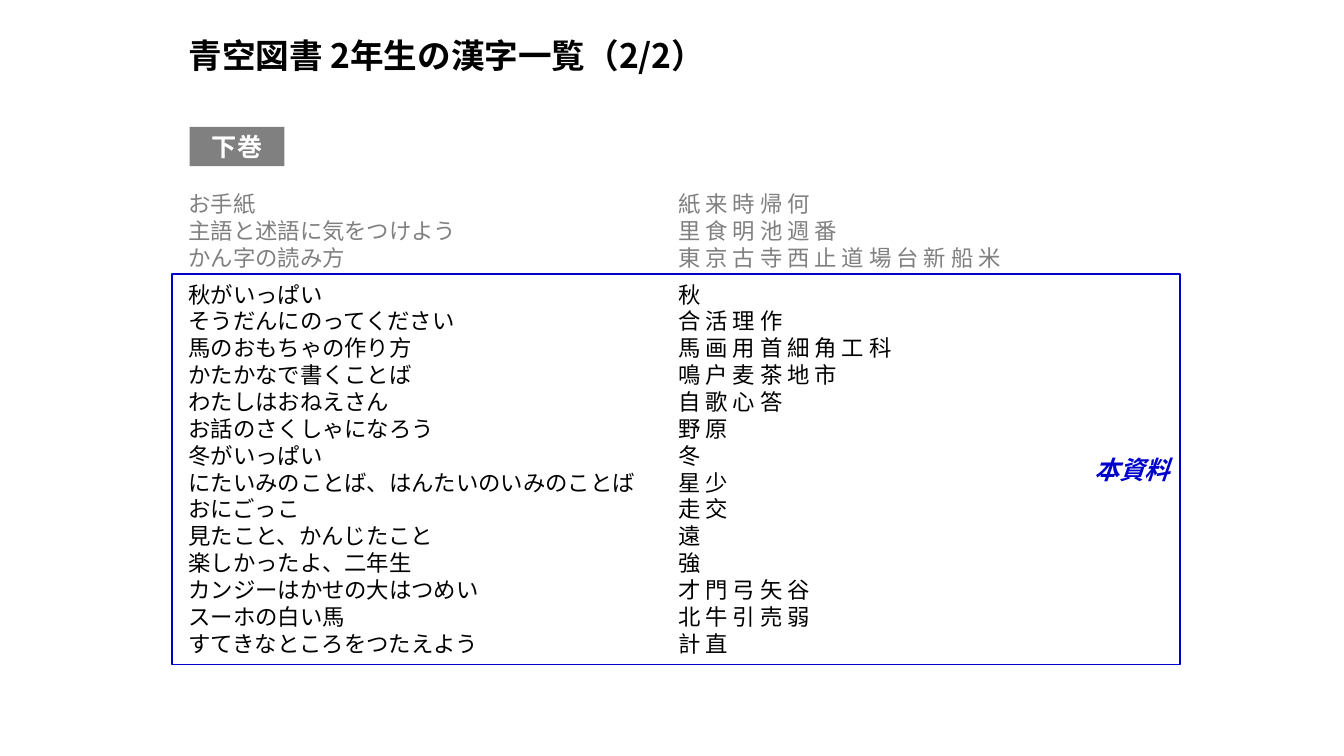
from dataclasses import dataclass

from lxml.etree import SubElement
from pptx import Presentation
from pptx.dml.color import RGBColor
from pptx.enum.shapes import MSO_SHAPE
from pptx.enum.text import MSO_ANCHOR, PP_ALIGN
from pptx.oxml.ns import qn
from pptx.util import Cm, Pt


@dataclass(frozen=True)
class Theme:
    """Fonts, type sizes and colours of the slide."""
    font: str = "Noto Sans CJK JP"
    title: int = 24
    label: int = 18
    body: int = 16
    leading: float = 1.2
    ink: RGBColor = RGBColor(0x00, 0x00, 0x00)
    grey: RGBColor = RGBColor(0x80, 0x80, 0x80)
    white: RGBColor = RGBColor(0xFF, 0xFF, 0xFF)
    blue: RGBColor = RGBColor(0x00, 0x00, 0xCC)


THEME = Theme()

EARLIER_UNITS = [
    ("お手紙", "紙来時帰何"),
    ("主語と述語に気をつけよう", "里食明池週番"),
    ("かん字の読み方", "東京古寺西止道場台新船米"),
]
COVERED_UNITS = [
    ("秋がいっぱい", "秋"),
    ("そうだんにのってください", "合活理作"),
    ("馬のおもちゃの作り方", "馬画用首細角工科"),
    ("かたかなで書くことば", "鳴戸麦茶地市"),
    ("わたしはおねえさん", "自歌心答"),
    ("お話のさくしゃになろう", "野原"),
    ("冬がいっぱい", "冬"),
    ("にたいみのことば、はんたいのいみのことば", "星少"),
    ("おにごっこ", "走交"),
    ("見たこと、かんじたこと", "遠"),
    ("楽しかったよ、二年生", "強"),
    ("カンジーはかせの大はつめい", "才門弓矢谷"),
    ("スーホの白い馬", "北牛引売弱"),
    ("すてきなところをつたえよう", "計直"),
]


def write(p, text, size=THEME.body, color=THEME.ink, bold=False, italic=False,
          align=PP_ALIGN.LEFT, before=0):
    """Write formatted text into a paragraph."""
    p.alignment = align
    p.line_spacing = Pt(size * THEME.leading)
    p.space_before = Pt(before)
    r = p.add_run()
    r.text = text
    f = r.font
    f.name, f.size, f.bold, f.italic = THEME.font, Pt(size), bold, italic
    f.color.rgb = color
    SubElement(f._element, qn("a:ea")).set("typeface", THEME.font)


def add_tab(p, position):
    """Set a left tab stop on a paragraph."""
    tabs = SubElement(p._p.get_or_add_pPr(), qn("a:tabLst"))
    tab = SubElement(tabs, qn("a:tab"))
    tab.set("pos", str(position))
    tab.set("algn", "l")


def text_frame(s, box):
    """Add a wrapping text box and return its frame."""
    tf = s.shapes.add_textbox(*box).text_frame
    tf.word_wrap = True
    return tf


def add_panel(s, box, text, fill=None, line=None, **style):
    """Add a rectangle with a vertically centred label."""
    sp = s.shapes.add_shape(MSO_SHAPE.RECTANGLE, *box)
    sp.shadow.inherit = False
    if fill is None:
        sp.fill.background()
    else:
        sp.fill.solid()
        sp.fill.fore_color.rgb = fill
    if line is None:
        sp.line.fill.background()
    else:
        sp.line.color.rgb = line
        sp.line.width = Pt(1)
    tf = sp.text_frame
    tf.word_wrap = True
    tf.vertical_anchor = MSO_ANCHOR.MIDDLE
    write(tf.paragraphs[0], text, size=THEME.label, bold=True, **style)


def add_title(s, box):
    """Add the slide title."""
    write(text_frame(s, box).paragraphs[0], "青空図書 2年生の漢字一覧（2/2）",
          size=THEME.title, bold=True)


def add_kanji_list(s, box):
    """List the units with their kanji in a tabbed second column."""
    tf = text_frame(s, box)
    for i, (unit, kanji) in enumerate(EARLIER_UNITS + COVERED_UNITS):
        p = tf.add_paragraph() if i else tf.paragraphs[0]
        earlier = i < len(EARLIER_UNITS)
        write(p, f"{unit}\t{' '.join(kanji)}",
              color=THEME.grey if earlier else THEME.ink,
              before=7 if i == len(EARLIER_UNITS) else 0)
        add_tab(p, Cm(12.34))


def main():
    """Build and save the presentation."""
    prs = Presentation()
    prs.slide_width, prs.slide_height = Cm(33.87), Cm(19.05)
    s = prs.slides.add_slide(prs.slide_layouts[6])
    add_kanji_list(s, (Cm(4.5), Cm(4.67), Cm(24.28), Cm(12.57)))
    add_title(s, (Cm(4.5), Cm(0.76), Cm(24.61), Cm(1.3)))
    add_panel(s, (Cm(4.78), Cm(3.2), Cm(2.39), Cm(0.99)), "下巻",
              fill=THEME.grey, color=THEME.white, align=PP_ALIGN.CENTER)
    add_panel(s, (Cm(4.34), Cm(6.91), Cm(25.4), Cm(9.83)), "本資料",
              line=THEME.blue, color=THEME.blue, italic=True,
              align=PP_ALIGN.RIGHT)
    prs.save("out.pptx")


if __name__ == "__main__":
    main()
